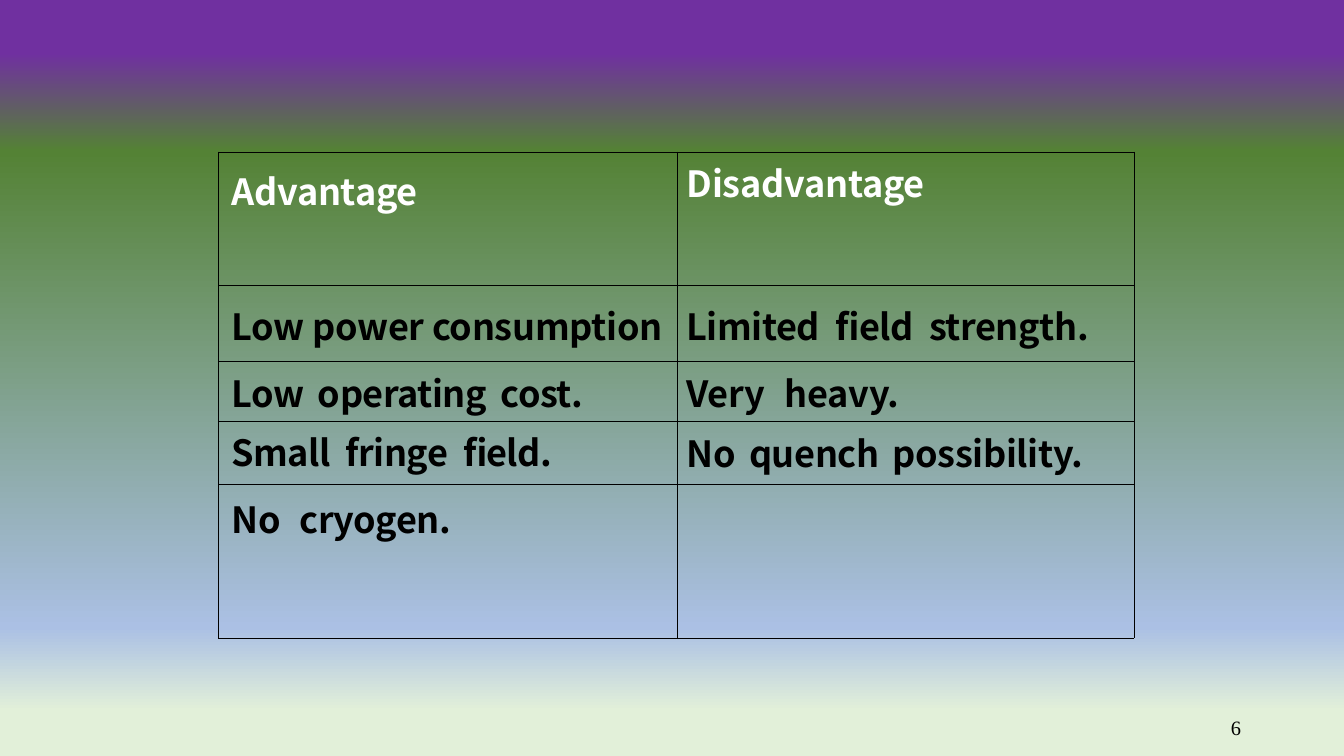
from lxml import etree
from pptx import Presentation
from pptx.dml.color import RGBColor
from pptx.enum.text import PP_ALIGN
from pptx.oxml import parse_xml
from pptx.oxml.ns import nsdecls, qn
from pptx.util import Inches, Pt

RIGHT = PP_ALIGN.RIGHT

# Content: text, letter spacing, extra points per word gap, top inset
ROWS = [
    [("Advantage", -0.4, 0, 0.26), ("Disadvantage", -0.4, 0, 0.09)],
    [("Low power consumption", -0.4, 0, 0.28),
     ("Limited field strength.", -0.7, 12, 0.28)],
    [("Low operating cost.", -0.7, 9, 0.09), ("Very heavy.", -0.5, 18, 0.09)],
    [("Small fringe field.", -0.8, 11, 0.08),
     ("No quench possibility.", -0.5, 8, 0.1)],
    [("No cryogen.", -0.7, 17, 0.16), None],
]
PAGE = "6"

# Layout in inches
WIDE, HIGH = 28.44, 16
LEFT, TOP = 4.62, 3.21
COLS = [9.7, 9.68]
TALL = [2.83, 1.61, 1.26, 1.33, 3.26]
INDENT = [0.28, 0.21]

THEME = {
    "back": [(7, "7030A0"), (20, "548235"), (83, "ABC0E4"), (94, "E2F0D9")],
    "line": ("000000", 0.5),
    "head": {"name": "Noto Sans CJK SC", "size": Pt(55), "bold": True,
             "color": "FFFFFF"},
    "body": {"name": "Noto Sans CJK SC", "size": Pt(55), "bold": True,
             "color": "000000"},
    "page": {"name": "Times New Roman", "size": Pt(31), "bold": False,
             "color": "000000"},
}


def put(obj, vals):
    for key, val in vals.items():
        setattr(obj, key, val)


def add_run(para, text, look, track=0):
    run = para.add_run()
    run.text = text
    put(run.font, {k: v for k, v in look.items() if k != "color"})
    run.font.color.rgb = RGBColor.from_string(look["color"])
    run.font._element.set("spc", str(round(track * 100)))


def add_words(para, text, look, track, gap):
    for i, word in enumerate(text.split()):
        if i:
            add_run(para, " ", look, track + gap)
        add_run(para, word, look, track)


def rule(cell):
    color, width = THEME["line"]
    props = cell._tc.get_or_add_tcPr()
    for i, side in enumerate(("lnL", "lnR", "lnT", "lnB")):
        line = etree.Element(qn("a:" + side), w=str(Pt(width)))
        fill = etree.SubElement(line, qn("a:solidFill"))
        etree.SubElement(fill, qn("a:srgbClr"), val=color)
        props.insert(i, line)


def paint(slide):
    stops = "".join(
        f'<a:gs pos="{pos * 1000}"><a:srgbClr val="{color}"/></a:gs>'
        for pos, color in THEME["back"])
    slide.background.fill.solid()
    props = slide._element.cSld.find(qn("p:bg")).find(qn("p:bgPr"))
    props.replace(props[0], parse_xml(
        f'<a:gradFill {nsdecls("a")} rotWithShape="1"><a:gsLst>{stops}'
        '</a:gsLst><a:lin ang="5400000" scaled="0"/></a:gradFill>'))


def add_grid(slide):
    table = slide.shapes.add_table(
        len(ROWS), len(COLS), Inches(LEFT), Inches(TOP),
        Inches(sum(COLS)), Inches(sum(TALL))).table
    put(table, {"first_row": False, "horz_banding": False})
    for col, width in zip(table.columns, COLS):
        col.width = Inches(width)
    for r, (row, height) in enumerate(zip(ROWS, TALL)):
        table.rows[r].height = Inches(height)
        look = THEME["body" if r else "head"]
        for c, item in enumerate(row):
            cell = table.cell(r, c)
            cell.fill.background()
            rule(cell)
            if item is None:
                continue
            text, track, gap, inset = item
            put(cell, {"margin_left": Inches(INDENT[c]), "margin_right": 0,
                       "margin_top": Inches(inset), "margin_bottom": 0})
            add_words(cell.text_frame.paragraphs[0], text, look, track, gap)


def add_page(slide):
    box = slide.shapes.add_textbox(
        Inches(26.03), Inches(15.13), Inches(0.23), Inches(0.5))
    frame = box.text_frame
    put(frame, {"word_wrap": True, "margin_left": 0, "margin_right": 0,
                "margin_top": 0, "margin_bottom": 0})
    para = frame.paragraphs[0]
    para.alignment = RIGHT
    add_run(para, PAGE, THEME["page"], -1.3)


def main():
    deck = Presentation()
    put(deck, {"slide_width": Inches(WIDE), "slide_height": Inches(HIGH)})
    slide = deck.slides.add_slide(deck.slide_layouts[6])
    paint(slide)
    # Comparison table, then the page number
    add_grid(slide)
    add_page(slide)
    deck.save("out.pptx")


if __name__ == "__main__":
    main()
